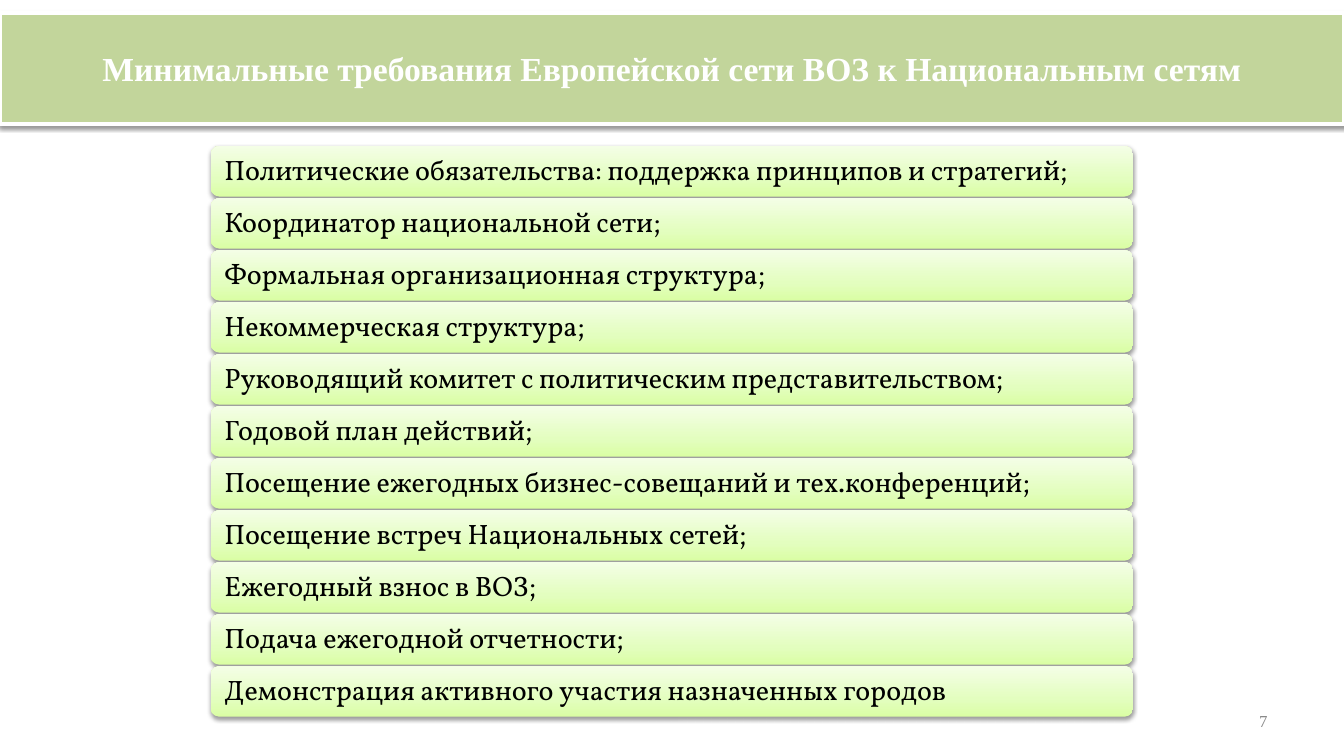
from lxml import etree
from pptx import Presentation
from pptx.dml.color import RGBColor
from pptx.enum.shapes import MSO_SHAPE
from pptx.enum.text import MSO_ANCHOR, MSO_AUTO_SIZE, PP_ALIGN
from pptx.oxml import parse_xml
from pptx.oxml.ns import nsdecls, qn
from pptx.util import Inches, Pt

ROUND = MSO_SHAPE.ROUNDED_RECTANGLE
MIDDLE = MSO_ANCHOR.MIDDLE
FIXED = MSO_AUTO_SIZE.NONE
LEFT, CENTER, RIGHT = PP_ALIGN.LEFT, PP_ALIGN.CENTER, PP_ALIGN.RIGHT

BLACK = RGBColor(0x00, 0x00, 0x00)
WHITE = RGBColor(0xFF, 0xFF, 0xFF)
GRAY = RGBColor(0x88, 0x88, 0x88)
SAGE = RGBColor(0xC2, 0xD5, 0x9B)
LIME = RGBColor(0xDA, 0xFE, 0xA4)
PALE = RGBColor(0xE3, 0xFE, 0xBF)
MIST = RGBColor(0xF4, 0xFE, 0xE6)
SHADES = [(0, LIME), (35, PALE), (100, MIST)]

TITLE = "Минимальные требования Европейской сети ВОЗ к Национальным сетям"
RULES = [
    "Политические обязательства: поддержка принципов и стратегий;",
    "Координатор национальной сети;",
    "Формальная организационная структура;",
    "Некоммерческая структура;",
    "Руководящий комитет с политическим представительством;",
    "Годовой план действий;",
    "Посещение ежегодных бизнес-совещаний и тех.конференций;",
    "Посещение встреч Национальных сетей;",
    "Ежегодный взнос в ВОЗ;",
    "Подача ежегодной отчетности;",
    "Демонстрация активного участия назначенных городов",
]


class Deck:
    """Style and current slide; places are percent of the slide's size."""

    serif = "Times New Roman"
    body = "Vollkorn"

    def __init__(self):
        self.file = Presentation()
        self.file.slide_width = Inches(13.33)
        self.file.slide_height = Inches(7.5)
        self.slide = self.file.slides.add_slide(self.file.slide_layouts[5])

    def place(self, left, top, width, height):
        wide, high = self.file.slide_width, self.file.slide_height
        return [int(share * full / 100) for share, full in
                zip((left, top, width, height), (wide, high, wide, high))]

    def label(self, shape, text, font, size, color, align, inset=(0.1, 0.05)):
        frame = shape.text_frame
        frame.text = text
        frame.word_wrap = True
        frame.auto_size = FIXED
        frame.vertical_anchor = MIDDLE
        frame.margin_left = frame.margin_right = Inches(inset[0])
        frame.margin_top = frame.margin_bottom = Inches(inset[1])
        par = frame.paragraphs[0]
        par.alignment = align
        par.font.name = font
        par.font.size = Pt(size)
        par.font.color.rgb = color
        return par

    def shade(self, shape):
        """Add a soft black shadow below the shape."""
        shape.shadow.inherit = False
        effects = shape._element.spPr.find(qn("a:effectLst"))
        effects.append(parse_xml(
            f'<a:outerShdw {nsdecls("a")} blurRad="{Pt(3.1)}" dist="{Pt(1.6)}" '
            'dir="5400000" rotWithShape="0"><a:srgbClr val="000000">'
            '<a:alpha val="38000"/></a:srgbClr></a:outerShdw>'))

    def blend(self, shape):
        """Fill the shape with the green shades, from bottom to top."""
        shape.fill.gradient()
        shape.fill.gradient_angle = 90
        stops = shape._element.spPr.find(".//" + qn("a:gsLst"))
        for stop in list(stops):
            stops.remove(stop)
        for share, color in SHADES:
            stop = etree.SubElement(stops, qn("a:gs"), pos=str(share * 1000))
            etree.SubElement(stop, qn("a:srgbClr"), val=str(color))

    def title(self, text, *spot):
        shape = self.slide.shapes.title
        shape.left, shape.top, shape.width, shape.height = self.place(*spot)
        shape.fill.solid()
        shape.fill.fore_color.rgb = SAGE
        shape.line.color.rgb = WHITE
        shape.line.width = Pt(3)
        self.shade(shape)
        par = self.label(shape, text, self.serif, 24, WHITE, CENTER)
        par.font.bold = True

    def bar(self, text, *spot):
        shape = self.slide.shapes.add_shape(ROUND, *self.place(*spot))
        shape.adjustments[0] = 0.17
        self.blend(shape)
        shape.line.fill.background()
        self.shade(shape)
        par = self.label(shape, text, self.body, 20, BLACK, LEFT, (0.11, 0.1))
        par.line_spacing = 0.9

    def number(self, text, *spot):
        box = self.slide.shapes.add_textbox(*self.place(*spot))
        self.label(box, text, self.serif, 12, GRAY, RIGHT)


def main():
    deck = Deck()
    deck.title(TITLE, 0, 1.73, 100, 14.67)
    for row, rule in enumerate(RULES):
        deck.bar(rule, 15.68, 19.33 + 6.88 * row, 68.64, 6.67)
    deck.number("7", 71.72, 92.67, 23.33, 5.33)
    deck.file.save("out.pptx")


if __name__ == "__main__":
    main()
